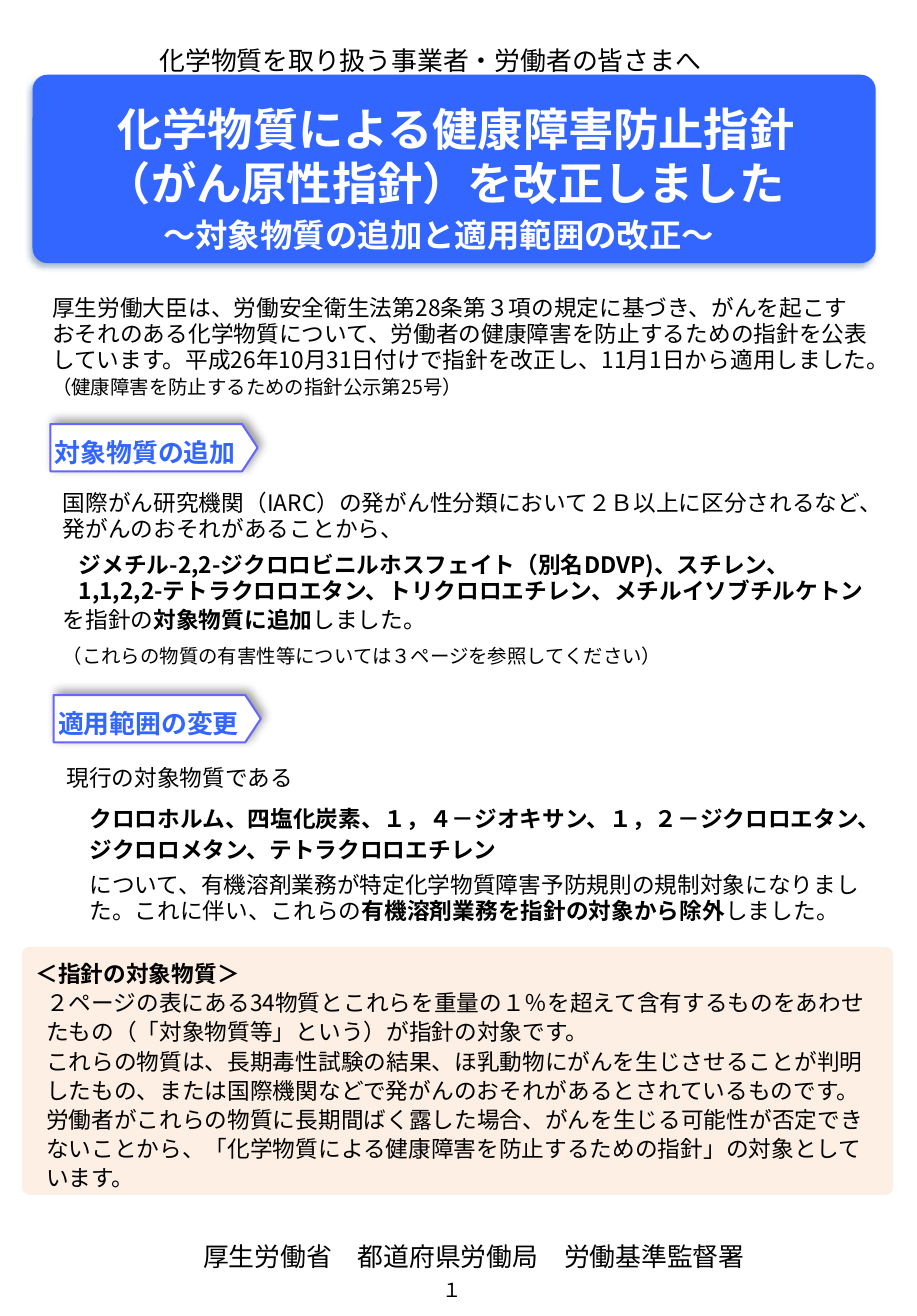
from lxml.etree import SubElement as Sub
from pptx import Presentation
from pptx.dml.color import RGBColor as RGB
from pptx.enum.lang import MSO_LANGUAGE_ID as Lang
from pptx.enum.shapes import MSO_SHAPE as Kind
from pptx.enum.text import MSO_ANCHOR as Anchor, MSO_AUTO_SIZE as Auto, PP_ALIGN as Align
from pptx.oxml.ns import qn
from pptx.util import Cm, Pt

theme = {
    "font": "Noto Sans CJK JP", "latin": "Arial",
    "ink": "000000", "white": "FFFFFF", "blue": "3366FF",
    "edge": "6666FF", "shade": "1F497D", "peach": "FDEFE3",
    "title": 28, "sub": 20, "head": 16, "body": 14, "note": 12,
}


def place(shape, spot, pad=(0.28, 0.13, 0.28, 0.13), anchor=Anchor.TOP,
          fill=None, edge=None, shade=None, round=None):
    shape.left, shape.top, shape.width, shape.height = map(Cm, spot)
    frame = shape.text_frame
    frame.word_wrap = True
    frame.auto_size = Auto.NONE
    frame.vertical_anchor = anchor
    frame.margin_left, frame.margin_top, frame.margin_right, frame.margin_bottom = map(Cm, pad)
    if round is not None:
        shape.adjustments[0] = round
    if fill:
        shape.fill.solid()
        shape.fill.fore_color.rgb = RGB.from_string(theme[fill])
        if edge:
            shape.line.color.rgb = RGB.from_string(theme[edge])
            shape.line.width = Pt(1.25)
        else:
            shape.line.fill.background()
        shape.shadow.inherit = False
    if shade:
        color, blur, turn = shade
        effects = shape._element.spPr.find(qn("a:effectLst"))
        drop = Sub(effects, qn("a:outerShdw"), blurRad=str(Pt(blur)), dist=str(Pt(3)),
                   dir=str(turn * 60000), algn="ctr", rotWithShape="0")
        tone = Sub(drop, qn("a:srgbClr"), val=theme[color])
        Sub(tone, qn("a:alpha"), val="40000")
    return shape


def write(shape, text, size="body", color="ink", font="font", bold=False,
          line=1.0, before=0, left=0, first=0, tail=""):
    frame = shape.text_frame
    para = frame.add_paragraph() if frame.text else frame.paragraphs[0]
    para.alignment = Align.LEFT
    para.line_spacing = line
    para.space_before, para.space_after = Pt(before), Pt(0)
    props = para._p.get_or_add_pPr()
    props.set("marL", str(Cm(left)))
    props.set("indent", str(Cm(first)))
    Sub(props, qn("a:buNone"))
    parts = [(part, size, bold or spot % 2 == 1) for spot, part in enumerate(text.split("*"))]
    for part, scale, strong in parts + [(tail, "note", bold)]:
        if part:
            run = para.add_run()
            run.text = part
            run.font.size = Pt(theme[scale])
            run.font.bold = strong
            run.font.name = theme[font]
            run.font.language_id = Lang.JAPANESE
            run.font.color.rgb = RGB.from_string(theme[color])
            Sub(run._r.rPr, qn("a:ea"), typeface=theme[font])


deck = Presentation()
deck.slide_width, deck.slide_height = Cm(20), Cm(28.7)
slide = deck.slides.add_slide(deck.slide_layouts[3])
shapes = slide.shapes
title, added, scope = slide.placeholders

banner = (0.71, 1.63, 18.39, 4.11)
place(shapes.add_shape(Kind.ROUNDED_RECTANGLE, 0, 0, 0, 0), banner,
      fill="blue", shade=("shade", 4, 135), round=0.08)
shapes._spTree.append(title._element)
place(title, banner, pad=(0.35, 0.6, 0.35, 0.23), anchor=Anchor.MIDDLE)
for text, size, first, line in [
    ("化学物質による健康障害防止指針", "title", 1.5, 1.0),
    ("（がん原性指針）を改正しました", "title", 1.25, 1.0),
    ("～対象物質の追加と適用範囲の改正～", "sub", 2.5, Pt(27)),
]:
    write(title, text, size=size, color="white", bold=True, first=first, line=line)

for text, spot, size, font in [
    ("化学物質を取り扱う事業者・労働者の皆さまへ", (3.2, 0.85, 14.38, 0.97), "head", "font"),
    ("厚生労働省　都道府県労働局　労働基準監督署", (4.15, 26.92, 12.9, 0.97), "head", "font"),
    ("１", (9.37, 27.74, 0.98, 0.81), "note", "latin"),
]:
    write(place(shapes.add_textbox(0, 0, 0, 0), spot), text, size=size, font=font)

intro = place(shapes.add_textbox(0, 0, 0, 0), (0.86, 6.31, 18.92, 2.62))
for text, tail in [
    ("厚生労働大臣は、労働安全衛生法第28条第３項の規定に基づき、がんを起こす", ""),
    ("おそれのある化学物質について、労働者の健康障害を防止するための指針を公表", ""),
    ("しています。平成26年10月31日付けで指針を改正し、11月1日から適用しました。 ",
     "（健康障害を防止するための指針公示第25号）"),
]:
    write(intro, text, line=Pt(16), tail=tail)

for text, left, top in [("対象物質の追加", 1.1, 9.25), ("適用範囲の変更", 1.17, 15.16)]:
    head = place(shapes.add_shape(Kind.PENTAGON, 0, 0, 0, 0), (left, top, 4.52, 1.03),
                 pad=(0.1, 0.2, 0.1, 0), anchor=Anchor.MIDDLE, fill="white",
                 edge="edge", shade=("ink", 6, 315), round=0.33)
    write(head, text, size="head", color="blue", bold=True)

place(added, (1.09, 10.57, 18.39, 4.19))
write(added, "国際がん研究機関（IARC）の発がん性分類において２Ｂ以上に区分されるなど、"
      "発がんのおそれがあることから、", line=Pt(16))
write(added, "ジメチル-2,2-ジクロロビニルホスフェイト（別名DDVP)、スチレン、",
      bold=True, line=Pt(16), before=6, first=0.35)
write(added, "1,1,2,2-テトラクロロエタン、トリクロロエチレン、メチルイソブチルケトン",
      bold=True, line=Pt(16), first=0.35)
write(added, "を指針の*対象物質に追加*しました。", line=Pt(12), before=6)
write(added, "（これらの物質の有害性等については３ページを参照してください）", size="note", line=1.5)

place(scope, (1.17, 16.46, 18.31, 3.89))
write(scope, "現行の対象物質である", line=Pt(19))
write(scope, "クロロホルム、四塩化炭素、１，４－ジオキサン、１，２－ジクロロエタン、"
      "ジクロロメタン、テトラクロロエチレン", bold=True, line=Pt(19), before=6, left=0.5)
write(scope, "について、有機溶剤業務が特定化学物質障害予防規則の規制対象になりました。"
      "これに伴い、これらの*有機溶剤業務を指針の対象から除外*しました。",
      line=Pt(16), before=6, left=0.5)

panel = place(shapes.add_shape(Kind.ROUNDED_RECTANGLE, 0, 0, 0, 0), (0.48, 20.65, 19, 5.41),
              pad=(0.25, 0.2, 0.25, 0.1), fill="peach", round=0.03)
write(panel, "＜指針の対象物質＞", bold=True, line=Pt(18))
for text in [
    "２ページの表にある34物質とこれらを重量の１％を超えて含有するものをあわせたもの"
    "（「対象物質等」という）が指針の対象です。",
    "これらの物質は、長期毒性試験の結果、ほ乳動物にがんを生じさせることが判明したもの、"
    "または国際機関などで発がんのおそれがあるとされているものです。"
    "労働者がこれらの物質に長期間ばく露した場合、がんを生じる可能性が否定できないことから、"
    "「化学物質による健康障害を防止するための指針」の対象としています。",
]:
    write(panel, text, line=Pt(18), left=0.23)

deck.save("out.pptx")
